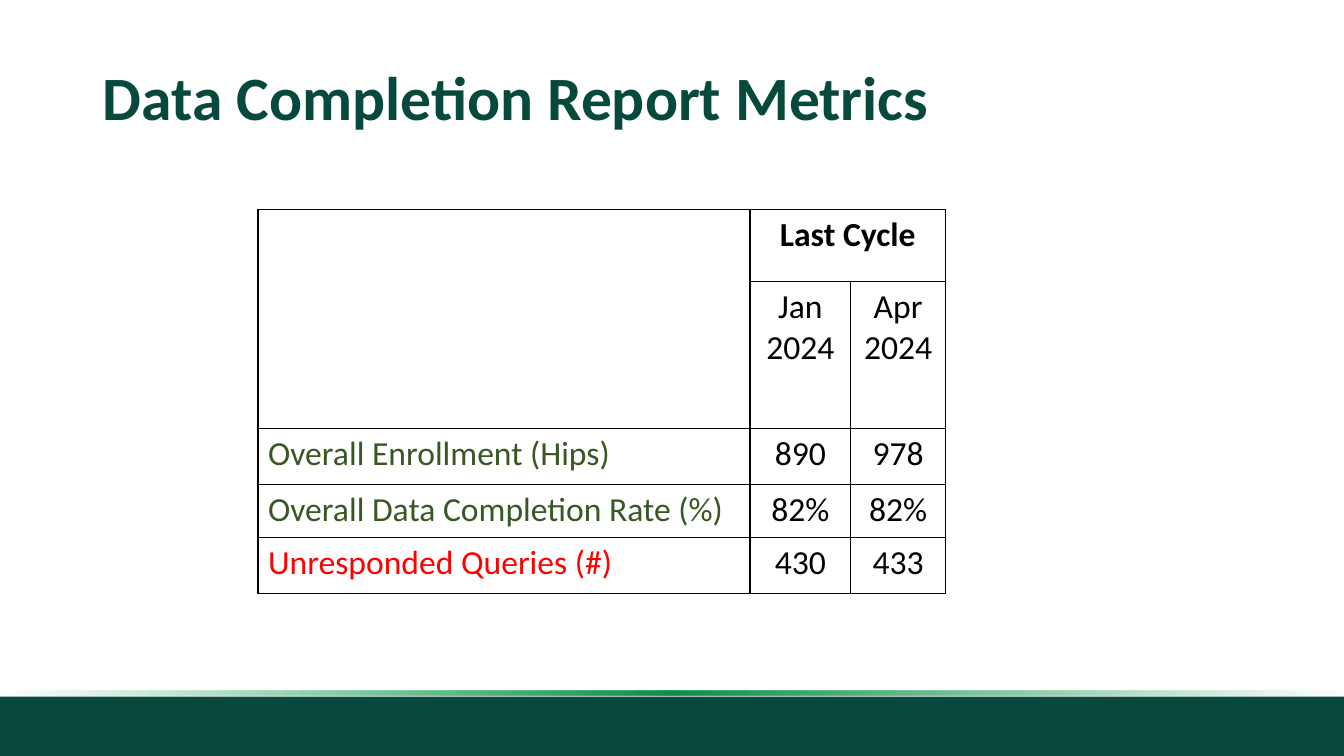
from lxml.etree import SubElement
from pptx import Presentation
from pptx.dml.color import RGBColor
from pptx.enum.shapes import MSO_SHAPE as Shape
from pptx.enum.text import MSO_ANCHOR as Anchor, PP_ALIGN as Align
from pptx.oxml.ns import qn
from pptx.util import Inches, Pt

DARK_GREEN, MOSS, RED, BLACK = "07493C", "385723", "FF0000", "000000"


def rgb(hex_text):
    return RGBColor.from_string(hex_text)


class SlideBuilder:
    """Adds styled elements to one slide; lengths are percentages of its size."""

    font_name = "Calibri"

    def __init__(self, deck):
        self.deck = deck
        self.slide = deck.slides.add_slide(deck.slide_layouts[5])

    def across(self, percent):
        return round(self.deck.slide_width * percent / 100)

    def down(self, percent):
        return round(self.deck.slide_height * percent / 100)

    def area(self, left, top, width, height):
        return self.across(left), self.down(top), self.across(width), self.down(height)

    def style(self, para, size, color, bold=False):
        para.font.name = self.font_name
        para.font.size = Pt(size)
        para.font.bold = bold
        para.font.color.rgb = rgb(color)

    def title(self, text, *place):
        box = self.slide.shapes.title
        box.left, box.top, box.width, box.height = self.area(*place)
        self.slide.shapes._spTree.append(box._element)
        frame = box.text_frame
        frame.text = text
        frame.word_wrap = True
        frame.vertical_anchor = Anchor.MIDDLE
        para = frame.paragraphs[0]
        para.alignment = Align.LEFT
        para.line_spacing = 0.9
        self.style(para, 44, DARK_GREEN, bold=True)

    def band(self, *place, color=DARK_GREEN):
        band = self.slide.shapes.add_shape(Shape.RECTANGLE, *self.area(*place))
        band.shadow.inherit = False
        band.line.fill.background()
        band.fill.solid()
        band.fill.fore_color.rgb = rgb(color)
        return band

    def fading_band(self, *place, stops):
        """Stops are (position %, colour, opacity %), running right to left."""
        band = self.band(*place)
        band.fill.gradient()
        band.fill.gradient_angle = 180
        stop_list = band.fill._fill._gradFill.find(qn("a:gsLst"))
        for old_stop in list(stop_list):
            stop_list.remove(old_stop)
        for position, color, opacity in stops:
            stop = SubElement(stop_list, qn("a:gs"), pos=str(position * 1000))
            tint = SubElement(stop, qn("a:srgbClr"), val=color)
            SubElement(tint, qn("a:alpha"), val=str(opacity * 1000))

    def border(self, cell):
        properties = cell._tc.get_or_add_tcPr()
        for side in ("lnL", "lnR", "lnT", "lnB"):
            line = SubElement(properties, qn(f"a:{side}"), w=str(Pt(1)))
            SubElement(SubElement(line, qn("a:solidFill")), qn("a:srgbClr"), val=BLACK)

    def table(self, left, top, widths, heights, rows, merges):
        """Each cell is (text, colour, bold); the first column is left-aligned."""
        place = self.area(left, top, sum(widths), sum(heights))
        table = self.slide.shapes.add_table(len(rows), len(widths), *place).table
        table.first_row = table.horz_banding = False
        for column, width in zip(table.columns, widths):
            column.width = self.across(width)
        for row, height in zip(table.rows, heights):
            row.height = self.down(height)
        for r, row in enumerate(rows):
            for c, (text, color, bold) in enumerate(row):
                cell = table.cell(r, c)
                self.border(cell)
                cell.fill.background()
                cell.text = text
                for para in cell.text_frame.paragraphs:
                    para.alignment = Align.CENTER if c else Align.LEFT
                    self.style(para, 24, color, bold)
        for first, last in merges:
            table.cell(*first).merge(table.cell(*last))


def main():
    deck = Presentation()
    deck.slide_width, deck.slide_height = Inches(13.33), Inches(7.5)
    page = SlideBuilder(deck)
    page.band(0, 92.13, 100, 7.87)
    page.fading_band(0, 91.33, 100, 0.7,
                     stops=[(0, "0D9D4F", 0), (50, "0C9049", 100), (100, "0FAB56", 0)])
    page.title("Data Completion Report Metrics", 6.9, 5.33, 89.12, 15.87)

    empty = ("", BLACK, False)
    metrics = [
        ("Overall Enrollment (Hips)", MOSS, "890", "978"),
        ("Overall Data Completion Rate (%)", MOSS, "82%", "82%"),
        ("Unresponded Queries (#)", RED, "430", "433"),
    ]
    rows = [
        [empty, ("Last Cycle", BLACK, True), empty],
        [empty, ("Jan\n2024", BLACK, False), ("Apr 2024", BLACK, False)],
    ]
    for label, color, *values in metrics:
        rows.append([(label, color, False)] + [(value, BLACK, False) for value in values])
    page.table(19.2, 27.73, widths=[36.6, 7.5, 7.05],
               heights=[9.47, 19.47, 7.4, 7.07, 7.4], rows=rows,
               merges=[((0, 0), (1, 0)), ((0, 1), (0, 2))])
    deck.save("out.pptx")


if __name__ == "__main__":
    main()
